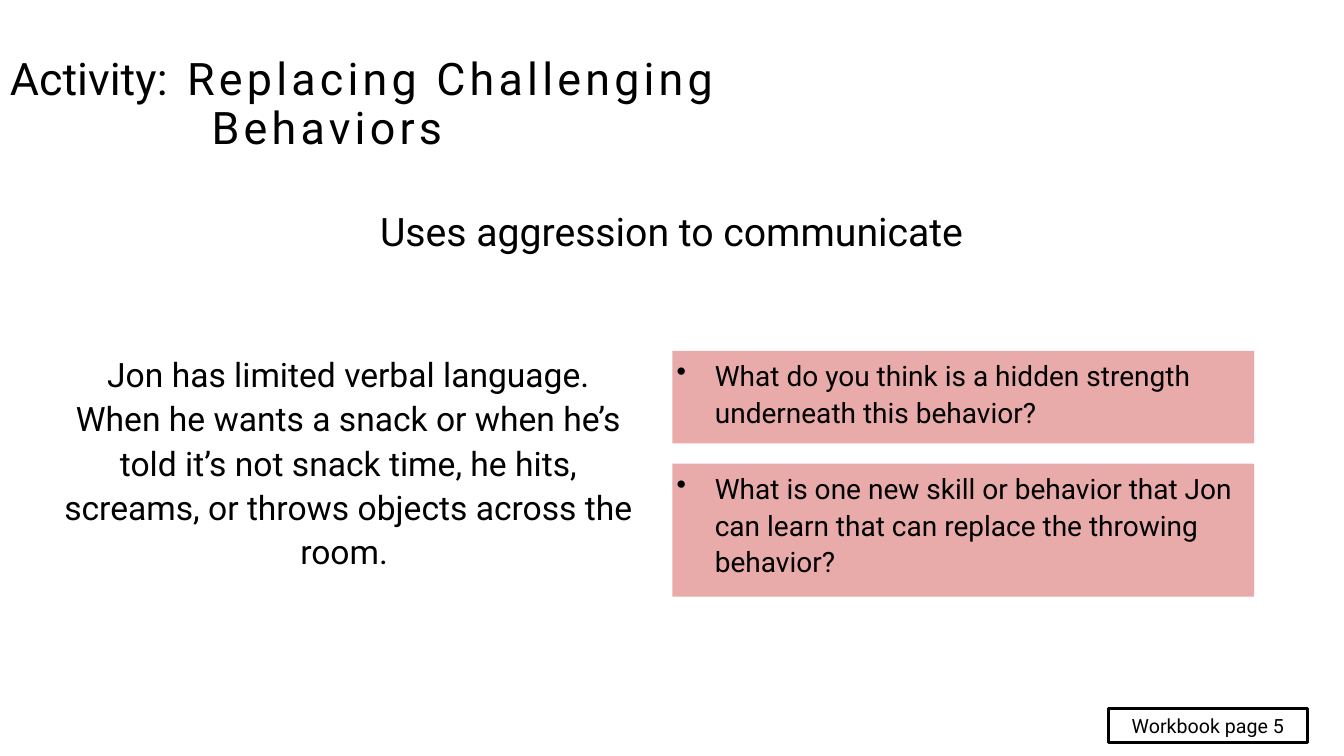
from lxml import etree
from pptx import Presentation
from pptx.dml.color import RGBColor
from pptx.enum import shapes, text
from pptx.oxml.ns import qn
from pptx.util import Pt

PX = 9144
COLORS = {"ink": "000000", "question": "E9AAAA"}
CENTER = text.PP_ALIGN.CENTER
SNUG = 4


def apply(target, values):
    for name, value in values.items():
        setattr(target, name, value)


def set_font(font, size):
    apply(font, {"size": Pt(size), "name": "Roboto"})
    font.color.rgb = RGBColor.from_string(COLORS["ink"])


def set_indent(paragraph, left, first):
    props = paragraph._p.get_or_add_pPr()
    props.set("marL", str(left * PX))
    props.set("indent", str(first * PX))
    return props


def write(shape, words, size, layout, inset=None):
    frame = shape.text_frame
    apply(frame, {"word_wrap": True, "vertical_anchor": text.MSO_ANCHOR.TOP})
    if inset is not None:
        sides = ("left", "top", "right", "bottom")
        apply(frame, {f"margin_{side}": inset * PX for side in sides})
    paragraph = frame.paragraphs[0]
    apply(paragraph, layout)
    run = paragraph.add_run()
    run.text = words
    set_font(run.font, size)
    return paragraph


def add_text(slide, box, words, size, layout, inset=None):
    label = slide.shapes.add_textbox(*(n * PX for n in box))
    write(label, words, size, layout, inset)


def add_rectangle(slide, box):
    rectangle = slide.shapes.add_shape(
        shapes.MSO_SHAPE.RECTANGLE, *(n * PX for n in box))
    rectangle.shadow.inherit = False
    return rectangle


def add_title(slide, box, lead, first_line, second_line):
    title = slide.shapes.add_textbox(*(n * PX for n in box))
    paragraph = write(title, lead, 32, {"line_spacing": 0.9})
    title.text_frame.vertical_anchor = text.MSO_ANCHOR.MIDDLE
    set_indent(paragraph, 200, -200)
    for line in (first_line, second_line):
        if line == second_line:
            paragraph.add_line_break()
        run = paragraph.add_run()
        run.text = line
        set_font(run.font, 32)
        run.font._element.set("spc", "300")


def add_question(slide, box, words):
    panel = add_rectangle(slide, box)
    panel.fill.solid()
    panel.fill.fore_color.rgb = RGBColor.from_string(COLORS["question"])
    panel.line.fill.background()
    layout = {"alignment": text.PP_ALIGN.LEFT, "line_spacing": 1.1}
    paragraph = write(panel, words, 20, layout, SNUG)
    props = set_indent(paragraph, 38, -38)
    etree.SubElement(props, qn("a:buChar")).set("char", "•")


def add_page_reference(slide, box, words):
    frame = add_rectangle(slide, box)
    frame.fill.background()
    frame.line.color.rgb = RGBColor.from_string(COLORS["ink"])
    frame.line.width = Pt(2)
    write(frame, words, 14, {"alignment": CENTER})


def main():
    deck = Presentation()
    apply(deck, {"slide_width": 1333 * PX, "slide_height": 750 * PX})
    slide = deck.slides.add_slide(deck.slide_layouts[6])

    add_title(slide, (0, 40, 1242, 129),
              "Activity", ": Replacing Challenging", "Behaviors")
    add_text(slide, (92, 201, 1148, 57), "Uses aggression to communicate",
             28, {"alignment": CENTER})
    add_text(slide, (57, 343, 577, 233),
             "Jon has limited verbal language. When he wants a snack or when "
             "he’s told it’s not snack time, he hits, screams, or throws "
             "objects across the room. ",
             24, {"alignment": CENTER, "line_spacing": 1.1}, SNUG)

    questions = (
        (348, 92, "What do you think is a hidden strength underneath this "
                  "behavior?"),
        (460, 132, "What is one new skill or behavior that Jon can learn that "
                   "can replace the throwing behavior?"),
    )
    for top, height, words in questions:
        add_question(slide, (667, top, 577, height), words)
    add_page_reference(slide, (1099, 703, 198, 34), "Workbook page 5")
    deck.save("out.pptx")


if __name__ == "__main__":
    main()
